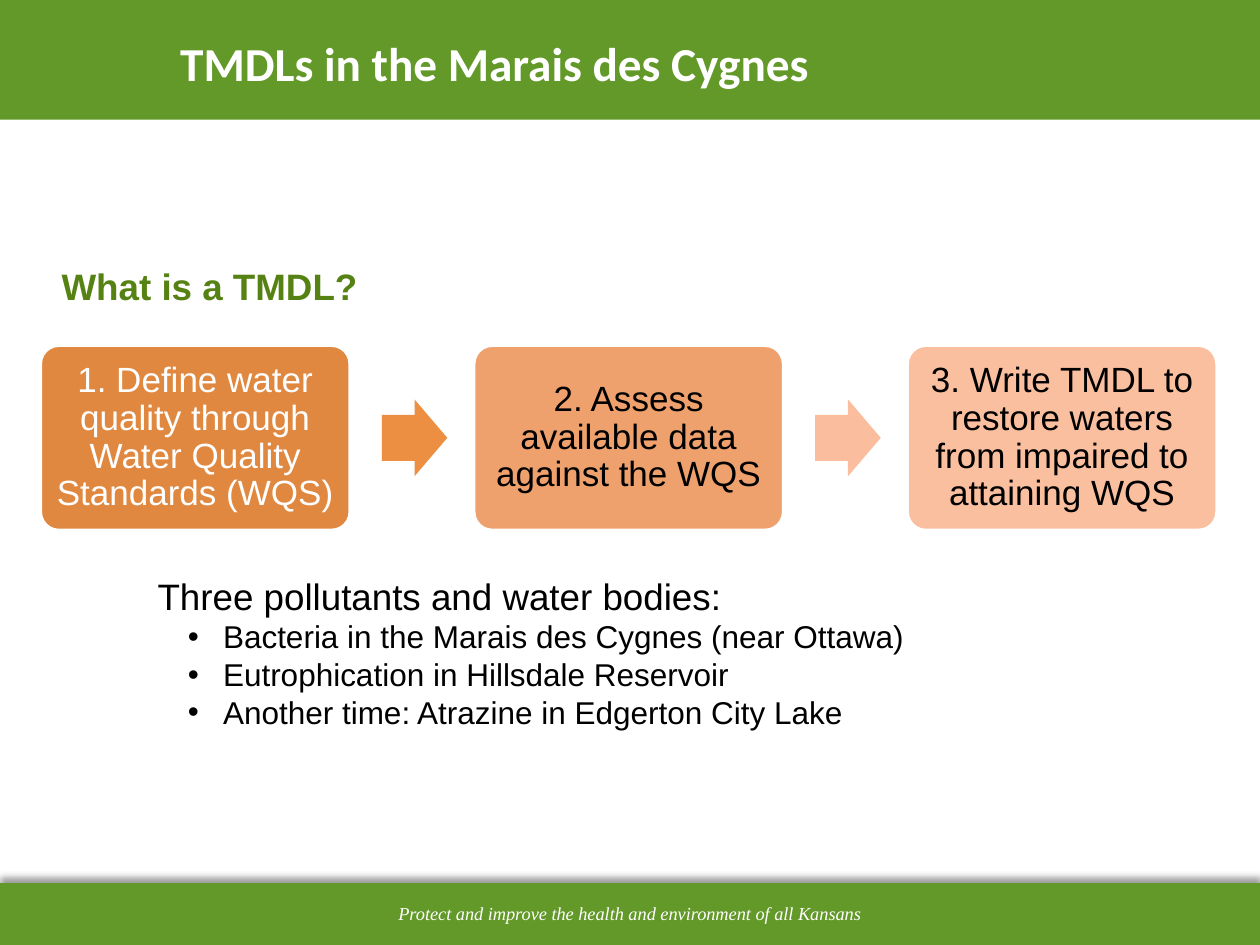
from dataclasses import dataclass

from lxml import etree
from pptx import Presentation
from pptx.dml.color import RGBColor
from pptx.enum.shapes import MSO_SHAPE
from pptx.enum.text import MSO_ANCHOR, MSO_AUTO_SIZE, PP_ALIGN
from pptx.oxml.ns import qn
from pptx.util import Inches, Pt

RECT = MSO_SHAPE.RECTANGLE
ROUNDED = MSO_SHAPE.ROUNDED_RECTANGLE
ARROW = MSO_SHAPE.RIGHT_ARROW
LEFT, CENTER = PP_ALIGN.LEFT, PP_ALIGN.CENTER
TOP, MIDDLE = MSO_ANCHOR.TOP, MSO_ANCHOR.MIDDLE


@dataclass(frozen=True)
class Theme:
    band: str = "639929"
    heading: str = "558213"
    white: str = "FFFFFF"
    black: str = "000000"
    step_fills: tuple = ("E08840", "EFA16D", "FABF9F")
    step_inks: tuple = ("FFFFFF", "000000", "000000")
    arrow_fills: tuple = ("EC8F43", "FABE9F")
    title_font: str = "Calibri"
    body_font: str = "Arial"
    motto_font: str = "Times New Roman"
    title_size: float = 27
    lead_size: float = 21
    step_size: float = 20
    list_size: float = 18
    motto_size: float = 10.5


THEME = Theme()
STEPS = (
    "1. Define water quality through Water Quality Standards (WQS)",
    "2. Assess available data against the WQS",
    "3. Write TMDL to restore waters from impaired to attaining WQS",
)
POLLUTANTS = (
    "Bacteria in the Marais des Cygnes (near Ottawa)",
    "Eutrophication in Hillsdale Reservoir",
    "Another time: Atrazine in Edgerton City Lake",
)


def place(shape, box):
    shape.left, shape.top, shape.width, shape.height = map(Inches, box)


def style(paragraph, font, size, color, align=LEFT, bold=False, italic=False):
    paragraph.alignment = align
    for run in paragraph.runs:
        run.font.name, run.font.size = font, Pt(size)
        run.font.bold, run.font.italic = bold, italic
        run.font.color.rgb = RGBColor.from_string(color)


def set_frame(frame, anchor=TOP, wrap=True, insets=(0.1, 0.05)):
    frame.auto_size = MSO_AUTO_SIZE.NONE
    frame.word_wrap = wrap
    frame.vertical_anchor = anchor
    frame.margin_left = frame.margin_right = Inches(insets[0])
    frame.margin_top = frame.margin_bottom = Inches(insets[1])


def add_filled(slide, preset, box, color):
    shape = slide.shapes.add_shape(preset, *map(Inches, box))
    shape.fill.solid()
    shape.fill.fore_color.rgb = RGBColor.from_string(color)
    shape.line.fill.background()
    shape.shadow.inherit = False
    return shape


def add_upward_shadow(shape):
    effects = shape.element.spPr.find(qn("a:effectLst"))
    shadow = etree.SubElement(effects, qn("a:outerShdw"), blurRad=str(Pt(4)),
                              dist=str(Pt(3)), dir="16200000", rotWithShape="0")
    color = etree.SubElement(shadow, qn("a:srgbClr"), val=THEME.black)
    etree.SubElement(color, qn("a:alpha"), val="40000")


def bring_to_front(shape):
    shape.element.getparent().append(shape.element)


def add_header(slide, box):
    left, top, width, height = box
    add_filled(slide, RECT, box, THEME.band)
    title = slide.shapes.title
    place(title, (left + 1.33, top + 0.23, 5.24, 0.56))
    title.text_frame.text = "TMDLs in the Marais des Cygnes"
    set_frame(title.text_frame, wrap=False)
    style(title.text_frame.paragraphs[0], THEME.title_font, THEME.title_size,
          THEME.white, bold=True)
    bring_to_front(title)


def add_footer(slide, box):
    left, top, width, height = box
    add_upward_shadow(add_filled(slide, RECT, box, THEME.band))
    motto = slide.shapes.add_textbox(Inches(left + 1), Inches(top + 0.09),
                                     Inches(width - 2), Inches(0.3))
    motto.text_frame.text = "Protect and improve the health and environment of all Kansans"
    set_frame(motto.text_frame, MIDDLE, insets=(0.06, 0.03))
    style(motto.text_frame.paragraphs[0], THEME.motto_font, THEME.motto_size,
          THEME.white, CENTER, italic=True)


def add_question(slide, box):
    question = slide.shapes.add_textbox(*map(Inches, box))
    question.text_frame.text = "What is a TMDL?"
    set_frame(question.text_frame)
    style(question.text_frame.paragraphs[0], THEME.body_font, THEME.lead_size,
          THEME.heading, bold=True)


def add_process(slide, box):
    """Spread the steps evenly over the box, with an arrow in each gap."""
    left, top, width, height = box
    step_width, arrow_width, arrow_height = 2.46, 0.52, 0.61
    pitch = (width - step_width) / (len(STEPS) - 1)
    for index, text in enumerate(STEPS):
        step_left = left + index * pitch
        step = add_filled(slide, ROUNDED, (step_left, top, step_width, height),
                          THEME.step_fills[index])
        step.adjustments[0] = 0.1
        step.line.color.rgb = RGBColor.from_string(THEME.white)
        step.line.width = Pt(2)
        step.text_frame.text = text
        set_frame(step.text_frame, MIDDLE, insets=(0.08, 0.12))
        paragraph = step.text_frame.paragraphs[0]
        paragraph.line_spacing = 0.9
        style(paragraph, THEME.body_font, THEME.step_size,
              THEME.step_inks[index], CENTER)

    for index, color in enumerate(THEME.arrow_fills):
        gap_center = left + index * pitch + (step_width + pitch) / 2
        arrow = add_filled(slide, ARROW, (
            gap_center - arrow_width / 2 + 0.02, top + (height - arrow_height) / 2,
            arrow_width, arrow_height), color)
        arrow.adjustments[0], arrow.adjustments[1] = 0.6, 0.5


def set_bullet(paragraph, indent, hanging, character=None):
    properties = paragraph._p.get_or_add_pPr()
    properties.set("marL", str(Inches(indent)))
    properties.set("indent", str(-Inches(hanging)))
    if character:
        etree.SubElement(properties, qn("a:buFont"), typeface=THEME.body_font)
        etree.SubElement(properties, qn("a:buChar"), char=character)
    else:
        etree.SubElement(properties, qn("a:buNone"))


def add_pollutants(slide, box):
    body = slide.placeholders[1]
    place(body, box)
    frame = body.text_frame
    frame.text = "\n".join(("Three pollutants and water bodies:",) + POLLUTANTS)
    set_frame(frame)
    lead, *items = frame.paragraphs
    set_bullet(lead, 0, 0)
    style(lead, THEME.body_font, THEME.lead_size, THEME.black)
    for item in items:
        set_bullet(item, 0.52, 0.28, "•")
        style(item, THEME.body_font, THEME.list_size, THEME.black)
    for paragraph in frame.paragraphs:
        paragraph.space_before = Pt(0)
    bring_to_front(body)


def main():
    presentation = Presentation()
    presentation.slide_width, presentation.slide_height = Inches(10), Inches(7.5)
    slide = presentation.slides.add_slide(presentation.slide_layouts[1])
    add_footer(slide, (0, 7.01, 10, 0.5))
    add_process(slide, (0.32, 2.74, 9.34, 1.47))
    add_pollutants(slide, (1.15, 4.5, 7.95, 1.36))
    add_question(slide, (0.39, 2.04, 8.09, 0.45))
    add_header(slide, (0, -0.01, 10, 0.96))
    presentation.save("out.pptx")


if __name__ == "__main__":
    main()
